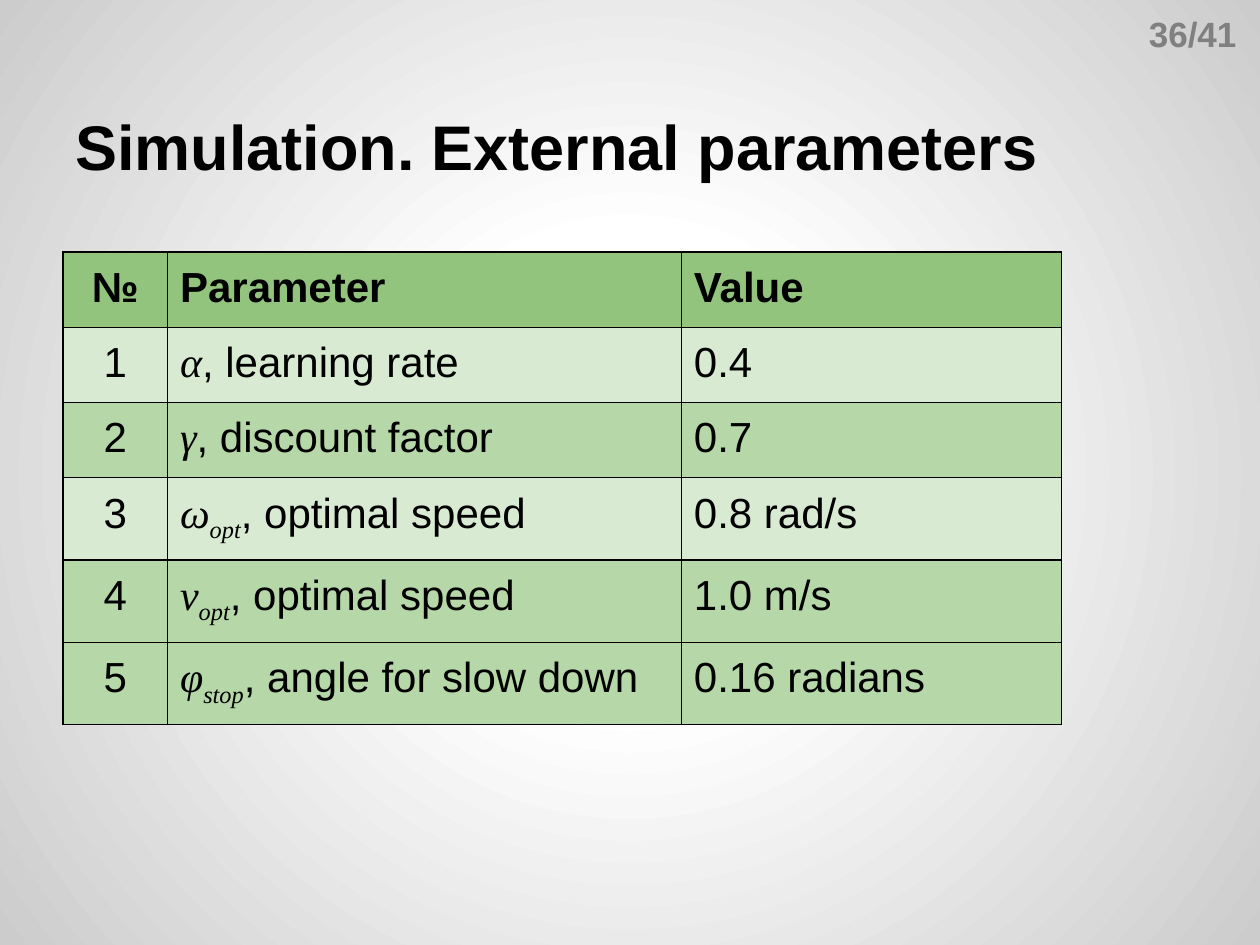
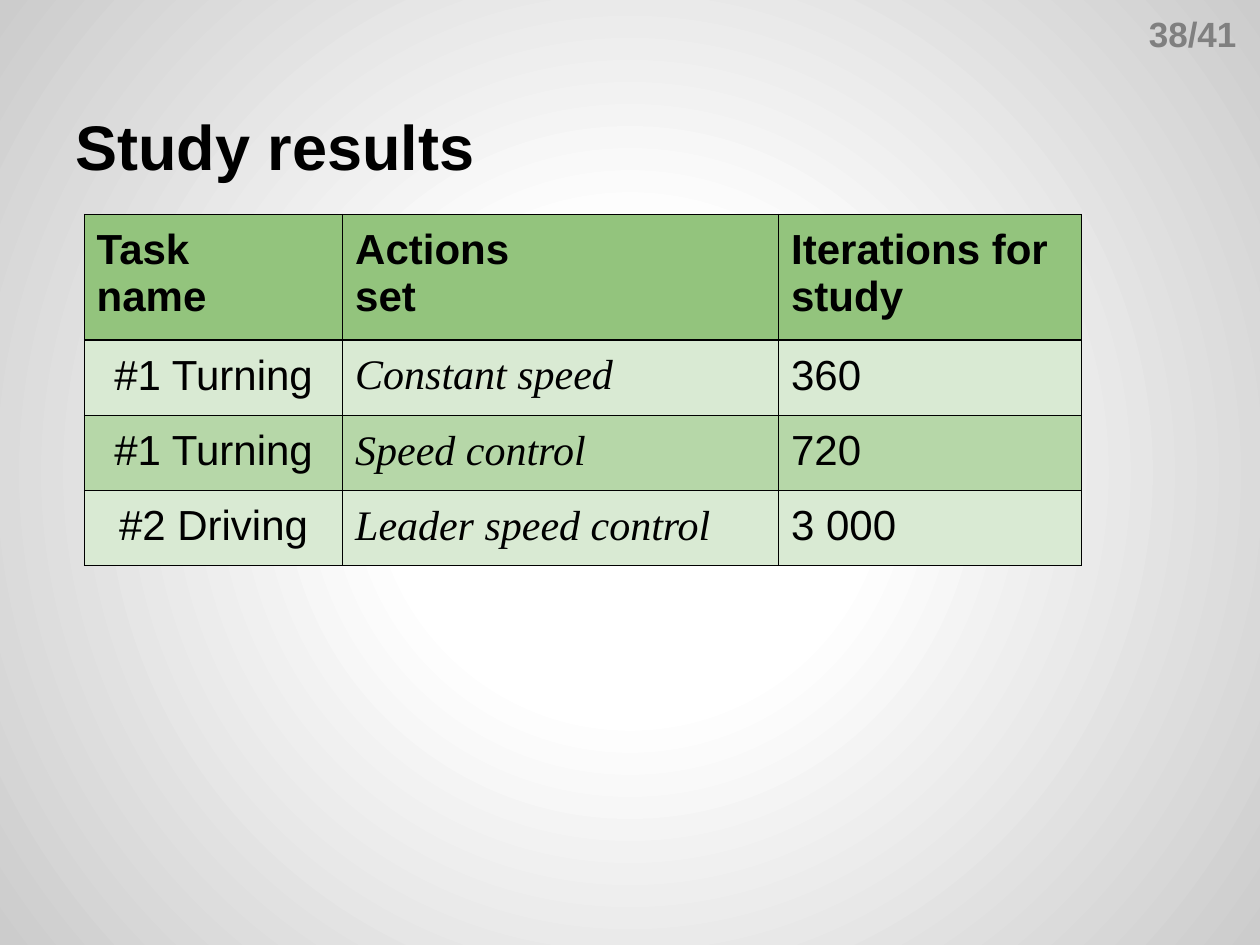
from lxml import etree
from pptx import Presentation
from pptx.dml.color import RGBColor
from pptx.enum.text import MSO_ANCHOR, MSO_AUTO_SIZE, PP_ALIGN
from pptx.oxml import parse_xml
from pptx.oxml.ns import nsdecls, qn
from pptx.util import Cm, Pt

LEFT, MID = PP_ALIGN.LEFT, PP_ALIGN.CENTER
LOW = MSO_ANCHOR.BOTTOM
FIXED, GROW = MSO_AUTO_SIZE.NONE, MSO_AUTO_SIZE.SHAPE_TO_FIT_TEXT

BLACK = RGBColor(0x00, 0x00, 0x00)
WHITE = RGBColor(0xFF, 0xFF, 0xFF)
SILVER = RGBColor(0xCC, 0xCC, 0xCC)
GRAY = RGBColor(0x80, 0x80, 0x80)
GREEN = RGBColor(0x93, 0xC4, 0x7D)
PALE = RGBColor(0xD9, 0xEA, 0xD3)
SOFT = RGBColor(0xB6, 0xD7, 0xA8)

STOPS = ((0, WHITE), (30, WHITE), (100, SILVER))
TITLE = {"name": "Arial", "size": Pt(36), "bold": True, "color": BLACK}
COUNT = {"name": "Arial", "size": Pt(20), "bold": True, "color": GRAY}
BODY = {"name": "Arial", "size": Pt(24), "bold": False, "color": BLACK}
HEAD = BODY | {"bold": True}
MATH = BODY | {"name": "Times New Roman", "italic": True}
SUB = MATH | {"base": -25}

TITLE_BOX = (Cm(1.27), Cm(0.76), Cm(22.86), Cm(3.18))
COUNT_BOX = (Cm(22.91), Cm(0.13), Cm(4.5), Cm(1.12))
PAD = Cm(0.25)
ROW = Cm(1.07)
TOTAL = 41


def style(run, look):
    """Apply a dict of format values to a run."""
    for key, value in look.items():
        if key == "color":
            run.font.color.rgb = value
        elif key == "base":
            run._r.get_or_add_rPr().set("baseline", str(value * 1000))
        else:
            setattr(run.font, key, value)


def write(frame, parts, align=LEFT):
    """Write (text, look) parts; newline starts a paragraph, \\v a line."""
    para = frame.paragraphs[0]
    para.alignment = align
    for text, look in parts:
        for i, block in enumerate(text.split("\n")):
            if i:
                para = frame.add_paragraph()
                para.alignment = align
            for j, line in enumerate(block.split("\v")):
                if j:
                    para.add_line_break()
                run = para.add_run()
                run.text = line
                style(run, look)


def pad(item):
    """Give a text frame or a cell even margins."""
    for side in ("left", "right", "top", "bottom"):
        setattr(item, f"margin_{side}", PAD)


def paint(master):
    """Give the master a round gradient background."""
    stops = "".join(
        f'<a:gs pos="{at * 1000}"><a:srgbClr val="{tone}"/></a:gs>'
        for at, tone in STOPS)
    back = parse_xml(
        f'<p:bg {nsdecls("p", "a")}><p:bgPr><a:gradFill><a:gsLst>{stops}'
        '</a:gsLst><a:path path="circle"><a:fillToRect l="50000" t="50000" '
        'r="50000" b="50000"/></a:path></a:gradFill><a:effectLst/>'
        '</p:bgPr></p:bg>')
    base = master.element.cSld
    for old in base.findall(qn("p:bg")):
        base.remove(old)
    base.insert(0, back)


def frame_cell(cell):
    """Draw thin black borders on all sides of a cell."""
    props = cell._tc.get_or_add_tcPr()
    for side in "LRTB":
        line = etree.SubElement(props, qn(f"a:ln{side}"), w=str(Pt(0.75)))
        fill = etree.SubElement(line, qn("a:solidFill"))
        etree.SubElement(fill, qn("a:srgbClr"), val=str(BLACK))


def add_grid(slide, left, top, widths, rows, tints, aligns):
    """Place a table whose rows hold lists of text parts."""
    shape = slide.shapes.add_table(
        len(rows), len(widths), left, top, sum(widths), ROW * len(rows))
    grid = shape.table
    grid.first_row = grid.horz_banding = False
    for col, width in zip(grid.columns, widths):
        col.width = width
    for r, (row, tint) in enumerate(zip(rows, tints)):
        grid.rows[r].height = ROW
        for c, (parts, align) in enumerate(zip(row, aligns[r])):
            cell = grid.cell(r, c)
            pad(cell)
            frame_cell(cell)
            cell.fill.solid()
            cell.fill.fore_color.rgb = tint
            write(cell.text_frame, parts, align)


def add_page(deck, title, number):
    """Add a slide with its title and page count."""
    slide = deck.slides.add_slide(deck.slide_layouts[5])
    head = slide.shapes.title
    head.left, head.top, head.width, head.height = TITLE_BOX
    frame = head.text_frame
    pad(frame)
    frame.auto_size, frame.vertical_anchor = FIXED, LOW
    write(frame, [(title, TITLE)])
    count = slide.shapes.add_textbox(*COUNT_BOX).text_frame
    count.word_wrap, count.auto_size = True, GROW
    write(count, [(f"{number}/{TOTAL}", COUNT)])
    return slide


def add_params(deck):
    """Build the slide of external parameters."""
    slide = add_page(deck, "Simulation. External parameters", 36)
    data = (
        ("α", "", "learning rate", "0.4"),
        ("γ", "", "discount factor", "0.7"),
        ("ω", "opt", "optimal speed", "0.8 rad/s"),
        ("v", "opt", "optimal speed", "1.0 m/s"),
        ("φ", "stop", "angle for slow down", "0.16 radians"),
    )
    rows = [[[(text, HEAD)] for text in ("№", "Parameter", "Value")]]
    for i, (sign, sub, name, value) in enumerate(data, 1):
        label = [(sign, MATH), (sub, SUB), (f", {name}", BODY)]
        rows.append([[(str(i), BODY)], [part for part in label if part[0]],
                     [(value, BODY)]])
    add_grid(slide, Cm(1.27), Cm(5.08), (Cm(2.11), Cm(10.36), Cm(7.65)), rows,
             (GREEN, PALE, SOFT, PALE, SOFT, SOFT),
             [(MID, LEFT, LEFT)] * len(rows))


def add_results(deck):
    """Build the slide of study results."""
    slide = add_page(deck, "Study results", 38)
    data = (
        ("#1 Turning", "Constant speed", "360"),
        ("#1 Turning", "Speed control", "720"),
        ("#2 Driving", "Leader speed control", "3 000"),
    )
    heads = ("Task\vname", "Actions\nset", "Iterations for study")
    rows = [[[(text, HEAD)] for text in heads]]
    rows += [[[cell] for cell in zip(line, (BODY, MATH, BODY))]
             for line in data]
    add_grid(slide, Cm(1.7), Cm(4.32), (Cm(5.21), Cm(8.79), Cm(6.1)), rows,
             (GREEN, PALE, SOFT, PALE),
             [(LEFT,) * 3] + [(MID, LEFT, LEFT)] * len(data))


def main():
    """Build and save the deck."""
    deck = Presentation()
    deck.slide_width, deck.slide_height = Cm(25.4), Cm(19.05)
    paint(deck.slide_master)
    add_params(deck)
    add_results(deck)
    deck.save("out.pptx")


if __name__ == "__main__":
    main()
